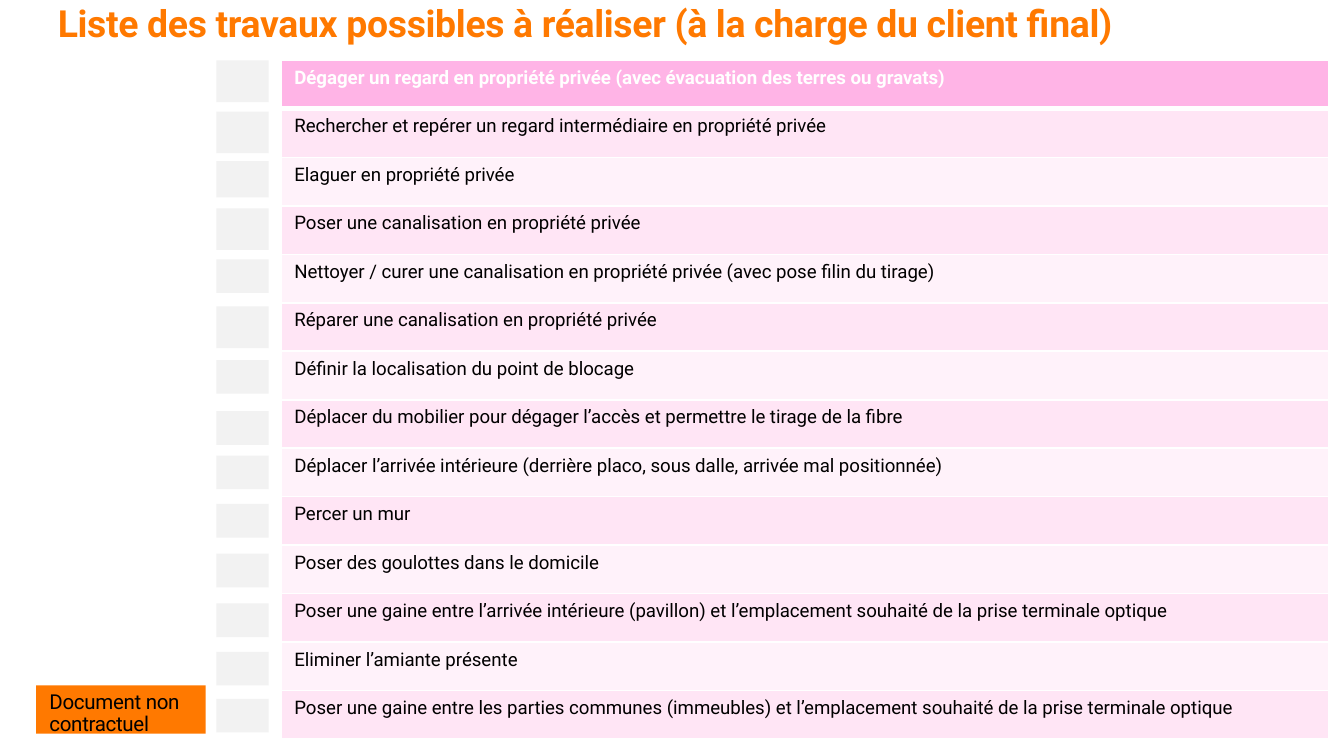
from pptx import Presentation
from pptx.dml.color import RGBColor
from pptx.enum.shapes import MSO_SHAPE as Shape
from pptx.enum.text import MSO_ANCHOR as Anchor, PP_ALIGN as Align
from pptx.util import Inches, Pt
from lxml.etree import SubElement
from pptx.oxml.ns import qn

# Content
TITLE = "Liste des travaux possibles à réaliser (à la charge du client final)"
NOTICE = "Document non contractuel"
# Each work item with the top and height of its tick box
WORKS = [
    ("Dégager un regard en propriété privée (avec évacuation des terres ou gravats)", 0.45, 0.31),
    ("Rechercher et repérer un regard intermédiaire en propriété privée", 0.83, 0.31),
    ("Elaguer en propriété privée", 1.2, 0.27),
    ("Poser une canalisation en propriété privée", 1.55, 0.31),
    ("Nettoyer / curer une canalisation en propriété privée (avec pose filin du tirage)", 1.93, 0.25),
    ("Réparer une canalisation en propriété privée", 2.28, 0.31),
    ("Définir la localisation du point de blocage", 2.68, 0.25),
    ("Déplacer du mobilier pour dégager l’accès et permettre le tirage de la fibre", 3.06, 0.25),
    ("Déplacer l’arrivée intérieure (derrière placo, sous dalle, arrivée mal positionnée)", 3.39, 0.25),
    ("Percer un mur", 3.75, 0.25),
    ("Poser des goulottes dans le domicile", 4.12, 0.25),
    ("Poser une gaine entre l’arrivée intérieure (pavillon) et l’emplacement souhaité "
     "de la prise terminale optique", 4.49, 0.25),
    ("Eliminer l’amiante présente", 4.85, 0.25),
    ("Poser une gaine entre les parties communes (immeubles) et l’emplacement souhaité "
     "de la prise terminale optique", 5.2, 0.25),
]

THEME = {
    "font": "Roboto",
    "orange": "FF7900", "white": "FFFFFF", "black": "000000", "tick": "F2F2F2",
    "header": "FFB4E6", "bands": ("FFF2FA", "FFE5F5"),
    "title_size": 20, "table_size": 10, "notice_size": 11,
}

# Layout, in inches; the slide is 16:9
SLIDE_WIDTH = 10
SLIDE_HEIGHT = SLIDE_WIDTH * 9 / 16
TABLE_LEFT, TABLE_TOP, TABLE_WIDTH, TABLE_HEIGHT = 2.09, 0.45, 7.8, 5.05
TICK_LEFT, TICK_WIDTH = 1.61, 0.39


def write(para, text, size, color, bold=False, tight=False):
    span = para.add_run()
    span.text = text
    font = span.font
    font.name, font.size, font.bold = THEME["font"], Pt(size), bold
    font.color.rgb = RGBColor.from_string(color)
    if tight:
        font._element.set("spc", "-20")


def add_block(page, left, top, width, height, color):
    box = page.shapes.add_shape(
        Shape.RECTANGLE, Inches(left), Inches(top), Inches(width), Inches(height))
    box.shadow.inherit = False
    box.fill.solid()
    box.fill.fore_color.rgb = RGBColor.from_string(color)
    box.line.fill.background()
    return box


def fill_cell(cell, color, top_line, bottom_line):
    props = cell._tc.get_or_add_tcPr()
    for side, points in (("L", 1), ("R", 1), ("T", top_line), ("B", bottom_line)):
        line = SubElement(props, qn(f"a:ln{side}"), w=str(Pt(points)))
        solid = SubElement(line, qn("a:solidFill"))
        SubElement(solid, qn("a:srgbClr"), val=THEME["white"])
    cell.fill.solid()
    cell.fill.fore_color.rgb = RGBColor.from_string(color)


def add_title(page):
    box = page.shapes.add_textbox(Inches(0.43), Inches(0.04), Inches(9.31), Inches(0.81))
    frame = box.text_frame
    frame.word_wrap = True
    frame.margin_left = frame.margin_right = frame.margin_top = frame.margin_bottom = 0
    para = frame.paragraphs[0]
    para.line_spacing = 0.9
    write(para, TITLE, THEME["title_size"], THEME["orange"], bold=True, tight=True)


def add_works_table(page):
    table = page.shapes.add_table(
        len(WORKS), 1, Inches(TABLE_LEFT), Inches(TABLE_TOP),
        Inches(TABLE_WIDTH), Inches(TABLE_HEIGHT)).table
    for index, (work, _, _) in enumerate(WORKS):
        header = index == 0
        cell = table.cell(index, 0)
        fill_cell(cell, THEME["header"] if header else THEME["bands"][index % 2],
                  top_line=3 if index == 1 else 1, bottom_line=3 if header else 1)
        write(cell.text_frame.paragraphs[0], work, THEME["table_size"],
              THEME["white"] if header else THEME["black"], bold=header)


def add_notice(page):
    box = add_block(page, 0.27, 5.1, 1.26, 0.36, THEME["orange"])
    frame = box.text_frame
    frame.word_wrap = True
    frame.vertical_anchor = Anchor.TOP
    para = frame.paragraphs[0]
    para.alignment = Align.LEFT
    para.line_spacing, para.space_before = 0.9, Pt(6)
    write(para, NOTICE, THEME["notice_size"], THEME["black"], tight=True)


def main():
    deck = Presentation()
    deck.slide_width, deck.slide_height = Inches(SLIDE_WIDTH), Inches(SLIDE_HEIGHT)
    page = deck.slides.add_slide(deck.slide_layouts[6])
    add_title(page)
    add_works_table(page)
    # Tick boxes beside the table
    for _, top, height in WORKS:
        add_block(page, TICK_LEFT, top, TICK_WIDTH, height, THEME["tick"])
    add_notice(page)
    deck.save("out.pptx")


if __name__ == "__main__":
    main()
